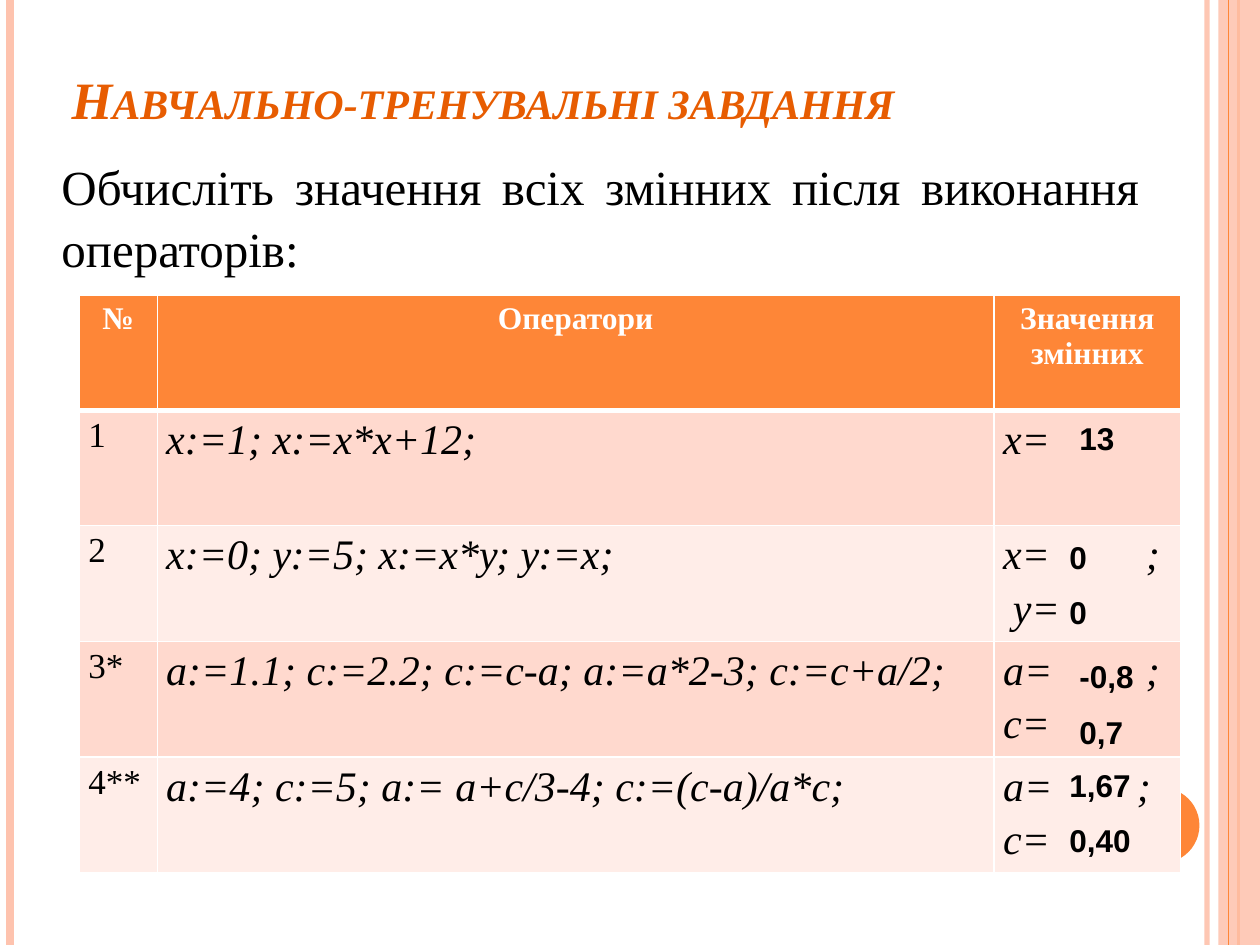
from lxml import etree
from pptx import Presentation
from pptx.dml.color import RGBColor
from pptx.enum.shapes import MSO_CONNECTOR, MSO_SHAPE
from pptx.enum.text import MSO_ANCHOR, PP_ALIGN
from pptx.oxml.ns import qn
from pptx.util import Cm, Pt

STRAIGHT = MSO_CONNECTOR.STRAIGHT
RECTANGLE, OVAL = MSO_SHAPE.RECTANGLE, MSO_SHAPE.OVAL
LEFT, CENTER, JUSTIFY = PP_ALIGN.LEFT, PP_ALIGN.CENTER, PP_ALIGN.JUSTIFY
TOP, BOTTOM = MSO_ANCHOR.TOP, MSO_ANCHOR.BOTTOM

WHITE = RGBColor(0xFF, 0xFF, 0xFF)
BLACK = RGBColor(0, 0, 0)
ORANGE = RGBColor(0xFE, 0x86, 0x37)
DARK_ORANGE = RGBColor(0xE7, 0x5C, 0x01)
PEACH = RGBColor(0xFE, 0xC3, 0xAE)
BANDS = (RGBColor(0xFF, 0xD9, 0xCE), RGBColor(0xFF, 0xED, 0xE8))

SERIF, SANS = "Times New Roman", "Arial"
WIDTH, HEIGHT = 25.4, 19.05

TITLE = {"name": SERIF, "size": Pt(30), "bold": True, "italic": True, "color": DARK_ORANGE}
TASK = {"name": SERIF, "size": Pt(28), "color": BLACK}
HEADER = {"name": SERIF, "size": Pt(18), "bold": True, "color": WHITE}
NUMBER = {"name": SERIF, "size": Pt(20), "bold": False, "color": BLACK}
CODE = {"name": SERIF, "size": Pt(24), "bold": False, "italic": True, "color": BLACK}
ANSWER = {"name": SANS, "size": Pt(18), "bold": True, "color": BLACK}

COLUMNS = (1.57, 16.87, 3.76)
ROW_HEIGHT = 2.32
HEADINGS = ("№", "Оператори", "Значення змінних")
# Each row: number, operators, lines of results, tab stop before the semicolon
EXERCISES = (
    ("1", "х:=1; х:=х*х+12;", ("х=",), 2.88),
    ("2", "х:=0; у:=5; х:=х*у; у:=х;", ("х=\t;", "у="), 2.88),
    ("3*", "а:=1.1; с:=2.2; с:=с-а; а:=а*2-3; с:=с+а/2;", ("а=\t;", "с="), 2.88),
    ("4**", "а:=4; с:=5; а:= а+c/3-4; с:=(с-а)/а*с;", ("а=\t;", "с="), 2.7),
)
ANSWERS = (
    (21.51, 8.33, 2.0, ("13",)),
    (21.31, 10.72, 1.6, ("0", "0")),
    (21.51, 13.13, 2.2, ("-0,8", "0,7")),
    (21.31, 15.32, 2.2, ("1,67", "0,40")),
)


def set_alpha(fill_parent, percent):
    color = fill_parent.find(".//" + qn("a:srgbClr"))
    etree.SubElement(color, qn("a:alpha"), val=str(percent * 1000))


class SlideBuilder:
    def __init__(self, slide):
        self.slide = slide

    def add_lines(self, frame, lines, style, align=LEFT, **spacing):
        for index, line in enumerate(lines):
            para = frame.paragraphs[0] if index == 0 else frame.add_paragraph()
            para.alignment = align
            for name, value in spacing.items():
                setattr(para, name, value)
            span = para.add_run()
            span.text = line
            for name, value in style.items():
                if name == "color":
                    span.font.color.rgb = value
                else:
                    setattr(span.font, name, value)

    def title(self, text, left, top, width, height):
        box = self.slide.shapes.title
        box.left, box.top, box.width, box.height = map(Cm, (left, top, width, height))
        box.text_frame.vertical_anchor = BOTTOM
        self.add_lines(box.text_frame, [text], TITLE)
        box.text_frame.paragraphs[0].runs[0].font._element.set("cap", "small")

    def text(self, lines, left, top, width, height, style, **layout):
        box = self.slide.shapes.add_textbox(Cm(left), Cm(top), Cm(width), Cm(height))
        box.text_frame.word_wrap = True
        self.add_lines(box.text_frame, lines, style, **layout)

    def vertical_line(self, x, color, weight, alpha=100):
        line = self.slide.shapes.add_connector(STRAIGHT, Cm(x), 0, Cm(x), Cm(HEIGHT))
        line.line.color.rgb = color
        line.line.width = Pt(weight)
        if alpha < 100:
            set_alpha(line._element.spPr, alpha)
        etree.SubElement(line._element.spPr, qn("a:effectLst"))

    def shape(self, kind, left, top, width, height, color, alpha=100):
        shape = self.slide.shapes.add_shape(kind, Cm(left), Cm(top), Cm(width), Cm(height))
        shape.shadow.inherit = False
        shape.fill.solid()
        shape.fill.fore_color.rgb = color
        shape.line.fill.background()
        if alpha < 100:
            set_alpha(shape._element.spPr, alpha)

    def cell(self, cell, lines, style, fill, align, borders, **spacing):
        """Fill one table cell; borders gives points for left, right, top, bottom."""
        cell.fill.solid()
        cell.fill.fore_color.rgb = fill
        cell.vertical_anchor = TOP
        properties = cell._tc.get_or_add_tcPr()
        for index, (side, weight) in enumerate(zip("LRTB", borders)):
            border = etree.Element(qn(f"a:ln{side}"), w=str(int(Pt(weight))))
            solid = etree.SubElement(border, qn("a:solidFill"))
            etree.SubElement(solid, qn("a:srgbClr"), val=str(WHITE))
            properties.insert(index, border)
        self.add_lines(cell.text_frame, lines, style, align, **spacing)

    def result_layout(self, frame, stop):
        """Set the tab before a semicolon and indent the line for у."""
        for para in frame.paragraphs:
            properties = para._p.get_or_add_pPr()
            if "\t" in para.text:
                tabs = etree.SubElement(properties, qn("a:tabLst"))
                etree.SubElement(tabs, qn("a:tab"), pos=str(int(Cm(stop))), algn="l")
            elif para.text == "у=":
                properties.set("marL", str(int(Cm(0.2))))

    def exercise_table(self, left, top):
        rows = len(EXERCISES) + 1
        table = self.slide.shapes.add_table(
            rows, len(COLUMNS), Cm(left), Cm(top), Cm(sum(COLUMNS)), Cm(ROW_HEIGHT * rows)
        ).table
        for column, width in zip(table.columns, COLUMNS):
            column.width = Cm(width)
        for row in table.rows:
            row.height = Cm(ROW_HEIGHT)
        for index, heading in enumerate(HEADINGS):
            self.cell(table.cell(0, index), [heading], HEADER, ORANGE, CENTER, (1, 1, 1, 3))
        for row, (number, operators, results, stop) in enumerate(EXERCISES, 1):
            borders = (1, 1, 3 if row == 1 else 1, 1)
            contents = (([number], NUMBER, JUSTIFY), ([operators], CODE, JUSTIFY), (results, CODE, LEFT))
            for index, (lines, style, align) in enumerate(contents):
                cell = table.cell(row, index)
                cell.margin_left = cell.margin_right = Cm(0.18)
                cell.margin_top = cell.margin_bottom = 0
                self.cell(cell, lines, style, BANDS[(row - 1) % 2], align, borders, line_spacing=1.15)
            self.result_layout(table.cell(row, 2).text_frame, stop)


def main():
    deck = Presentation()
    deck.slide_width, deck.slide_height = Cm(WIDTH), Cm(HEIGHT)
    page = SlideBuilder(deck.slides.add_slide(deck.slide_layouts[5]))

    page.vertical_line(24.33, PEACH, 3, alpha=93)
    page.vertical_line(0.2, PEACH, 4.5)
    page.vertical_line(24.97, ORANGE, 1.5)
    page.shape(RECTANGLE, 24.56, 0, 0.84, HEIGHT, PEACH, alpha=87)
    page.vertical_line(24.77, ORANGE, 0.75)
    page.shape(OVAL, 22.66, 15.88, 1.52, 1.52, ORANGE)

    page.title("Навчально-тренувальні завдання", 1.19, 0.99, 20.75, 1.75)
    page.text(["Обчисліть значення всіх змінних після виконання операторів:"],
              0.99, 2.97, 22.22, 2.64, TASK, align=JUSTIFY, line_spacing=1.05)
    page.exercise_table(1.6, 5.95)
    for left, top, width, values in ANSWERS:
        page.text(values, left, top, width, 1.02 if len(values) == 1 else 2.16,
                  ANSWER, space_before=Pt(10))
    deck.save("out.pptx")


if __name__ == "__main__":
    main()
